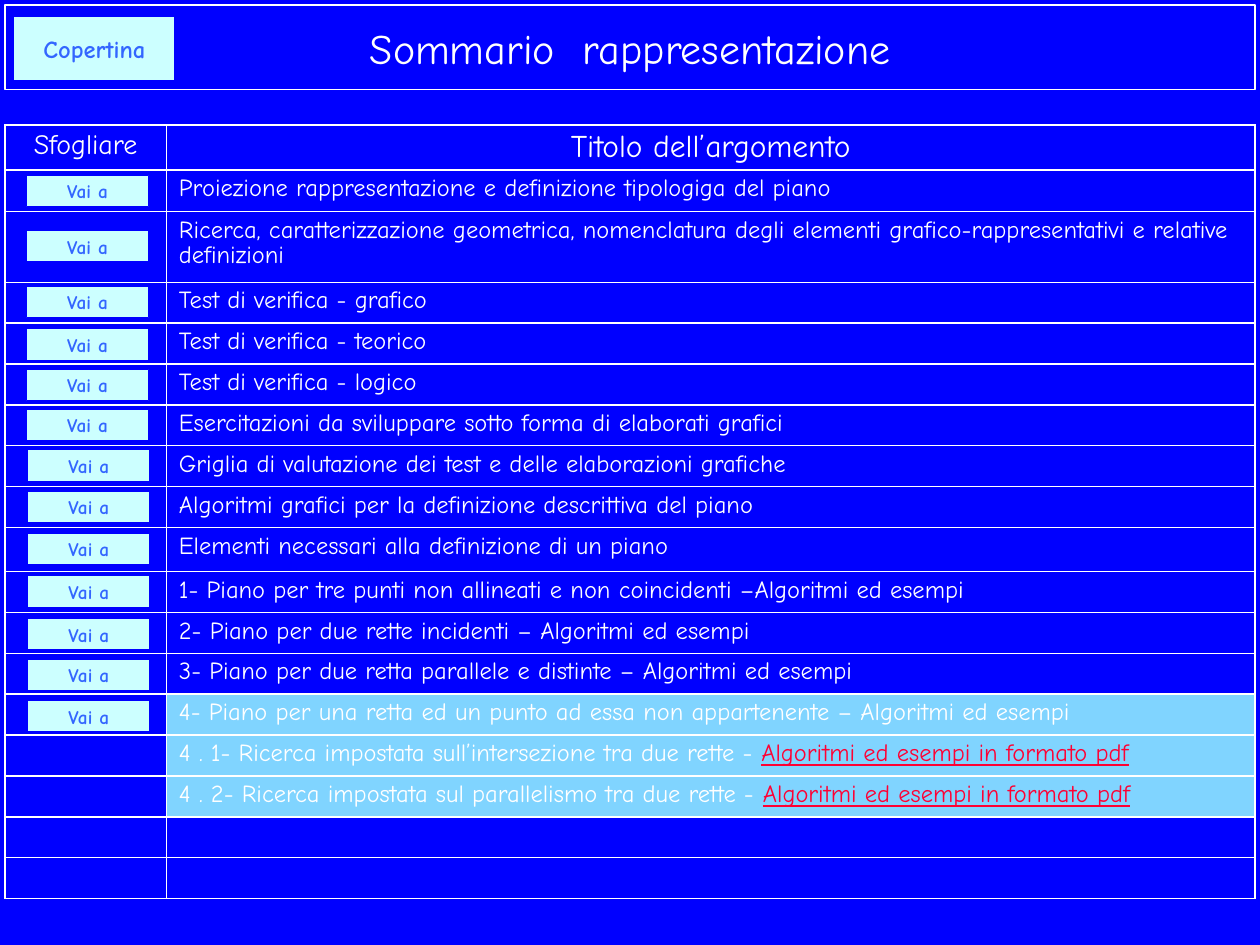
"""Build the summary slide with its table of topics and navigation buttons."""
from dataclasses import dataclass
from typing import Optional

from lxml import etree
from pptx import Presentation
from pptx.dml.color import RGBColor
from pptx.enum.shapes import MSO_SHAPE
from pptx.enum.text import MSO_ANCHOR, PP_ALIGN
from pptx.oxml.ns import qn
from pptx.util import Inches, Pt

RECT = MSO_SHAPE.RECTANGLE
BUTTON = MSO_SHAPE.ACTION_BUTTON_CUSTOM
MIDDLE = MSO_ANCHOR.MIDDLE
LEFT, CENTER = PP_ALIGN.LEFT, PP_ALIGN.CENTER


@dataclass(frozen=True)
class Theme:
    font: str = "Comic Neue"
    background: str = "0000FF"
    text: str = "FFFFFF"
    link: str = "FF0033"
    highlight: str = "80D4FF"
    button: str = "CCFFFF"
    button_text: str = "3366FF"
    title_size: float = 24
    heading_size: float = 18
    side_heading_size: float = 16
    body_size: float = 14
    button_size: float = 11


@dataclass(frozen=True)
class Topic:
    text: str = ""
    button_left: float = 0.22
    button_top: Optional[float] = None
    height: Optional[float] = None
    link: str = ""
    highlighted: bool = False


THEME = Theme()
PDF_LINK = "Algoritmi ed esempi in formato pdf"
TABLE_LEFT, TABLE_TOP, TABLE_HEIGHT = 0.04, 0.99, 6.13
COLUMN_WIDTHS = (1.28, 8.64)
HEADER_HEIGHT = 0.36
TOPICS = (
    Topic("Proiezione rappresentazione e definizione tipologiga del piano", 0.21, 1.39, 0.33),
    Topic("Ricerca, caratterizzazione geometrica, nomenclatura degli elementi "
          "grafico-rappresentativi e relative definizioni", 0.21, 1.83, 0.56),
    Topic("Test di verifica - grafico", 0.21, 2.27),
    Topic("Test di verifica - teorico", 0.21, 2.61),
    Topic("Test di verifica - logico", 0.21, 2.93, 0.31),
    Topic("Esercitazioni da sviluppare sotto forma di elaborati grafici", 0.21, 3.25),
    Topic("Griglia di valutazione dei test e delle elaborazioni grafiche", 0.22, 3.57),
    Topic("Algoritmi grafici per la definizione descrittiva del piano", 0.22, 3.9),
    Topic("Elementi necessari alla definizione di un piano", 0.22, 4.23, 0.35),
    Topic("1- Piano per tre punti non allineati e non coincidenti –Algoritmi ed esempi", 0.22, 4.57),
    Topic("2- Piano per due rette incidenti – Algoritmi ed esempi", 0.22, 4.91),
    Topic("3- Piano per due retta parallele e distinte – Algoritmi ed esempi", 0.22, 5.23),
    Topic("4- Piano per una retta ed un punto ad essa non appartenente – Algoritmi ed esempi",
          0.22, 5.56, highlighted=True),
    Topic("4 . 1- Ricerca impostata sull’intersezione tra due rette - ", link=PDF_LINK, highlighted=True),
    Topic("4 . 2- Ricerca impostata sul parallelismo tra due rette - ", link=PDF_LINK, highlighted=True),
    Topic(),
    Topic(),
)


def rgb(color: str) -> RGBColor:
    return RGBColor.from_string(color)


def style_paragraph(p, size: float, color: str, align=LEFT, bold: bool = False) -> None:
    p.alignment = align
    p.font.name = THEME.font
    p.font.size = Pt(size)
    p.font.bold = bold
    p.font.color.rgb = rgb(color)


def add_box(s, kind, left: float, top: float, width: float, height: float, text: str,
            size: float, color: str, fill: str, line: str, line_width: float, bold: bool) -> None:
    sp = s.shapes.add_shape(kind, Inches(left), Inches(top), Inches(width), Inches(height))
    sp.shadow.inherit = False
    sp.fill.solid()
    sp.fill.fore_color.rgb = rgb(fill)
    sp.line.color.rgb = rgb(line)
    sp.line.width = Pt(line_width)
    tf = sp.text_frame
    tf.word_wrap = True
    tf.vertical_anchor = MIDDLE
    p = tf.paragraphs[0]
    p.text = text
    style_paragraph(p, size, color, CENTER, bold)


def add_button(s, left: float, top: float, width: float, height: float, text: str, size: float) -> None:
    add_box(s, BUTTON, left, top, width, height, text, size, THEME.button_text,
            THEME.button, THEME.background, 0, True)


def set_borders(cell) -> None:
    tc_pr = cell._tc.get_or_add_tcPr()
    for i, side in enumerate(("lnL", "lnR", "lnT", "lnB")):
        ln = etree.Element(qn(f"a:{side}"), w=str(Pt(1)))
        fill = etree.SubElement(ln, qn("a:solidFill"))
        etree.SubElement(fill, qn("a:srgbClr"), val=THEME.text)
        tc_pr.insert(i, ln)


def fill_cell(cell, text: str, size: float, align=LEFT, link: str = "", highlighted: bool = False) -> None:
    if highlighted:
        cell.fill.solid()
        cell.fill.fore_color.rgb = rgb(THEME.highlight)
    else:
        cell.fill.background()
    set_borders(cell)
    p = cell.text_frame.paragraphs[0]
    p.line_spacing = 0.9
    style_paragraph(p, size, THEME.text, align)
    if not text:
        etree.SubElement(p._p, qn("a:endParaRPr"), sz=str(int(size * 100)))
        return
    p.add_run().text = text
    if link:
        r = p.add_run()
        r.text = link
        r.font.underline = True
        r.font.color.rgb = rgb(THEME.link)


def add_topic_table(s) -> None:
    fixed = [t.height for t in TOPICS if t.height]
    regular = (TABLE_HEIGHT - HEADER_HEIGHT - sum(fixed)) / (len(TOPICS) - len(fixed))
    heights = [HEADER_HEIGHT] + [t.height or regular for t in TOPICS]
    table = s.shapes.add_table(len(heights), len(COLUMN_WIDTHS), Inches(TABLE_LEFT), Inches(TABLE_TOP),
                               Inches(sum(COLUMN_WIDTHS)), Inches(TABLE_HEIGHT)).table
    table.first_row = False
    table.horz_banding = False
    for column, width in zip(table.columns, COLUMN_WIDTHS):
        column.width = Inches(width)
    for row, height in zip(table.rows, heights):
        row.height = Inches(height)
    fill_cell(table.cell(0, 0), "Sfogliare", THEME.side_heading_size, CENTER)
    fill_cell(table.cell(0, 1), "Titolo dell’argomento", THEME.heading_size, CENTER)
    for i, topic in enumerate(TOPICS, start=1):
        fill_cell(table.cell(i, 0), "", THEME.body_size)
        fill_cell(table.cell(i, 1), topic.text, THEME.body_size, LEFT, topic.link, topic.highlighted)


def main() -> None:
    prs = Presentation()
    prs.slide_width, prs.slide_height = Inches(10), Inches(7.5)
    s = prs.slides.add_slide(prs.slide_layouts[6])
    s.background.fill.solid()
    s.background.fill.fore_color.rgb = rgb(THEME.background)
    add_box(s, RECT, 0.04, 0.04, 9.92, 0.67, "Sommario  rappresentazione", THEME.title_size,
            THEME.text, THEME.background, THEME.text, 1, False)
    add_topic_table(s)
    add_button(s, 0.11, 0.13, 1.28, 0.51, "Copertina", THEME.body_size)
    for topic in TOPICS:
        if topic.button_top is not None:
            add_button(s, topic.button_left, topic.button_top, 0.97, 0.25, "Vai a", THEME.button_size)
    prs.save("out.pptx")


if __name__ == "__main__":
    main()
